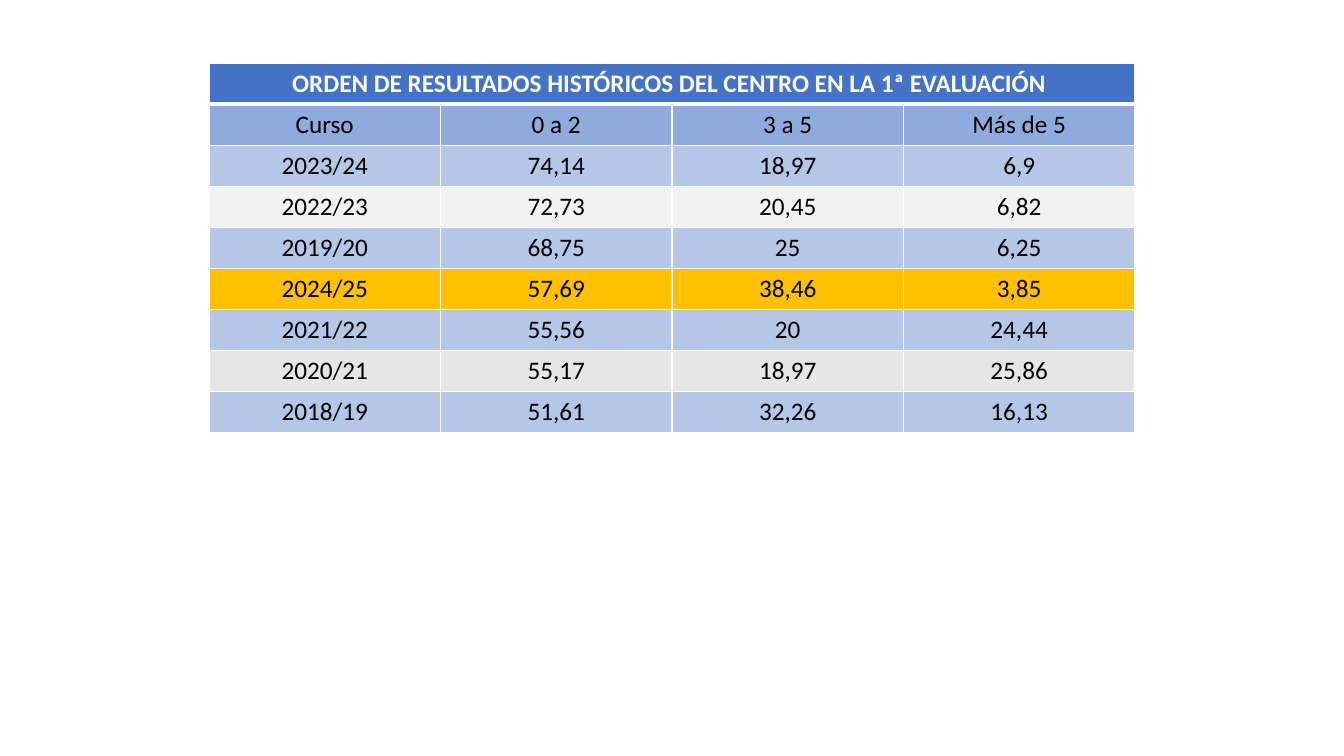
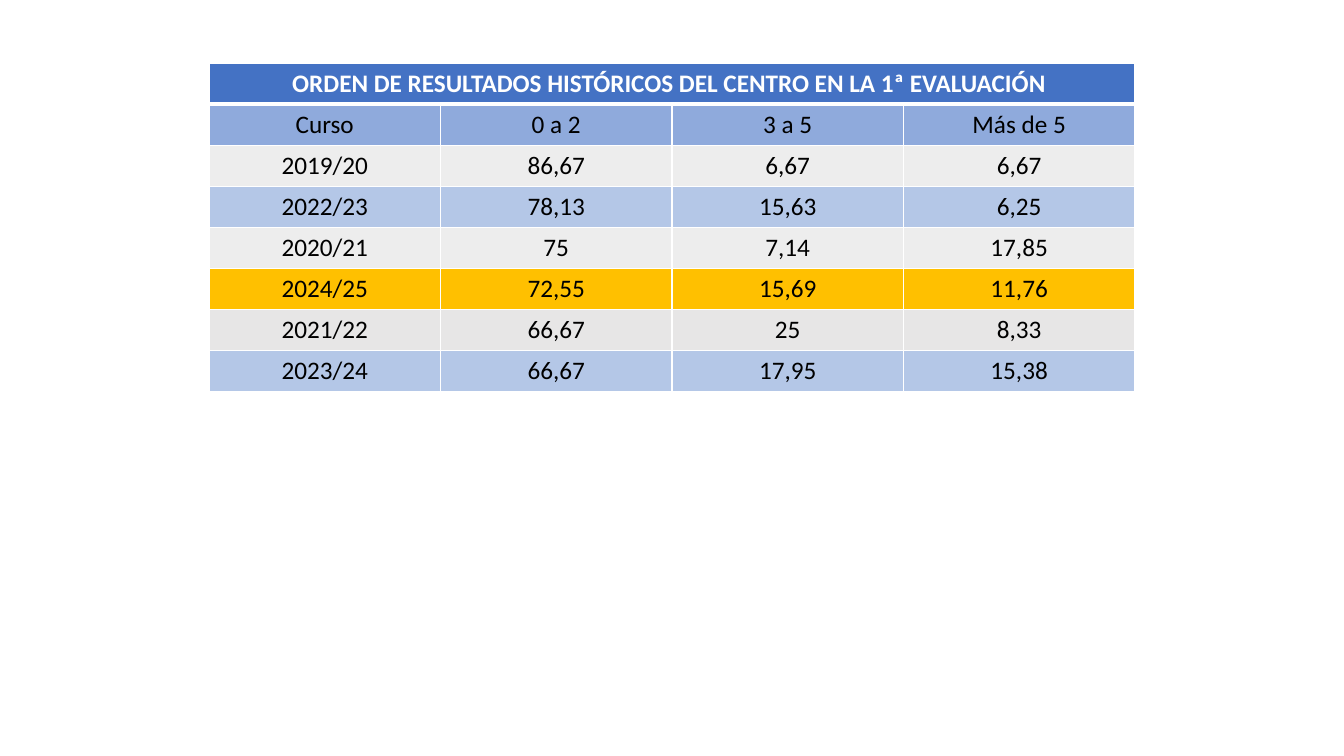
"""Build two slides ranking the school's first-evaluation results by year."""
from lxml.etree import SubElement
from pptx import Presentation
from pptx.dml.color import RGBColor
from pptx.enum.text import MSO_ANCHOR, PP_ALIGN
from pptx.oxml.ns import qn
from pptx.util import Pt

COLORS = {
    "title": "4472C4",
    "header": "8FAADC",
    "blue": "B4C7E7",
    "pale": "F2F2F2",
    "light": "EDEDED",
    "gray": "E7E6E6",
    "current": "FFC000",
    "white": "FFFFFF",
    "black": "000000",
}
TITLE_FONT = {"name": "Calibri", "size": Pt(18), "bold": True}
BODY_FONT = {**TITLE_FONT, "bold": False}
SLIDE_WIDTH, SLIDE_HEIGHT = 960, 540
COLUMN_WIDTH, ROW_HEIGHT, TABLE_TOP = 165.36, 29.36, 45
THIN, THICK = 1, 3

TITLE = "ORDEN DE RESULTADOS HISTÓRICOS DEL CENTRO EN LA 1ª EVALUACIÓN "
HEADER = ("header", "Curso", "0 a 2", "3 a 5", "Más de 5")
RANKINGS = [
    [
        ("blue", "2023/24", "74,14", "18,97", "6,9"),
        ("pale", "2022/23", "72,73", "20,45", "6,82"),
        ("blue", "2019/20", "68,75", "25", "6,25"),
        ("current", "2024/25", "57,69", "38,46", "3,85"),
        ("blue", "2021/22", "55,56", "20", "24,44"),
        ("gray", "2020/21", "55,17", "18,97", "25,86"),
        ("blue", "2018/19", "51,61", "32,26", "16,13"),
    ],
    [
        ("light", "2019/20", "86,67", "6,67", "6,67"),
        ("blue", "2022/23", "78,13", "15,63", "6,25"),
        ("light", "2020/21", "75", "7,14", "17,85"),
        ("current", "2024/25", "72,55", "15,69", "11,76"),
        ("gray", "2021/22", "66,67", "25", "8,33"),
        ("blue", "2023/24", "66,67", "17,95", "15,38"),
    ],
]


def rgb(color):
    return RGBColor.from_string(COLORS[color])


def add_borders(cell, top, bottom):
    properties = cell._tc.get_or_add_tcPr()
    widths = {"a:lnL": THIN, "a:lnR": THIN, "a:lnT": top, "a:lnB": bottom}
    for side, width in widths.items():
        border = SubElement(properties, qn(side), w=str(Pt(width)))
        paint = SubElement(border, qn("a:solidFill"))
        SubElement(paint, qn("a:srgbClr"), val=COLORS["white"])


def style_cell(cell, fill, top=THIN, bottom=THIN):
    add_borders(cell, top, bottom)
    cell.fill.solid()
    cell.fill.fore_color.rgb = rgb(fill)


def write_cell(cell, text, font_style, color):
    cell.vertical_anchor = MSO_ANCHOR.TOP
    paragraph = cell.text_frame.paragraphs[0]
    paragraph.alignment = PP_ALIGN.CENTER
    run = paragraph.add_run()
    run.text = text
    for attribute, value in font_style.items():
        setattr(run.font, attribute, value)
    run.font.color.rgb = rgb(color)


def add_title_row(table):
    cells = table.rows[0].cells
    for cell in cells:
        style_cell(cell, "title", bottom=THICK)
    table.cell(0, 0).merge(table.cell(0, len(table.columns) - 1))
    write_cell(table.cell(0, 0), TITLE, TITLE_FONT, "white")


def add_ranking(slide, ranking):
    rows = [HEADER, *ranking]
    columns = len(HEADER) - 1
    width, height = COLUMN_WIDTH * columns, ROW_HEIGHT * (len(rows) + 1)
    left = (SLIDE_WIDTH - width) / 2
    table = slide.shapes.add_table(
        len(rows) + 1, columns, Pt(left), Pt(TABLE_TOP), Pt(width), Pt(height)
    ).table
    for column in table.columns:
        column.width = Pt(COLUMN_WIDTH)
    for row in table.rows:
        row.height = Pt(ROW_HEIGHT)
    add_title_row(table)
    for index, (fill, *values) in enumerate(rows, start=1):
        for cell, value in zip(table.rows[index].cells, values):
            style_cell(cell, fill, top=THICK if index == 1 else THIN)
            write_cell(cell, value, BODY_FONT, "black")


def main():
    presentation = Presentation()
    presentation.slide_width = Pt(SLIDE_WIDTH)
    presentation.slide_height = Pt(SLIDE_HEIGHT)
    for ranking in RANKINGS:
        slide = presentation.slides.add_slide(presentation.slide_layouts[6])
        add_ranking(slide, ranking)
    presentation.save("out.pptx")


if __name__ == "__main__":
    main()
